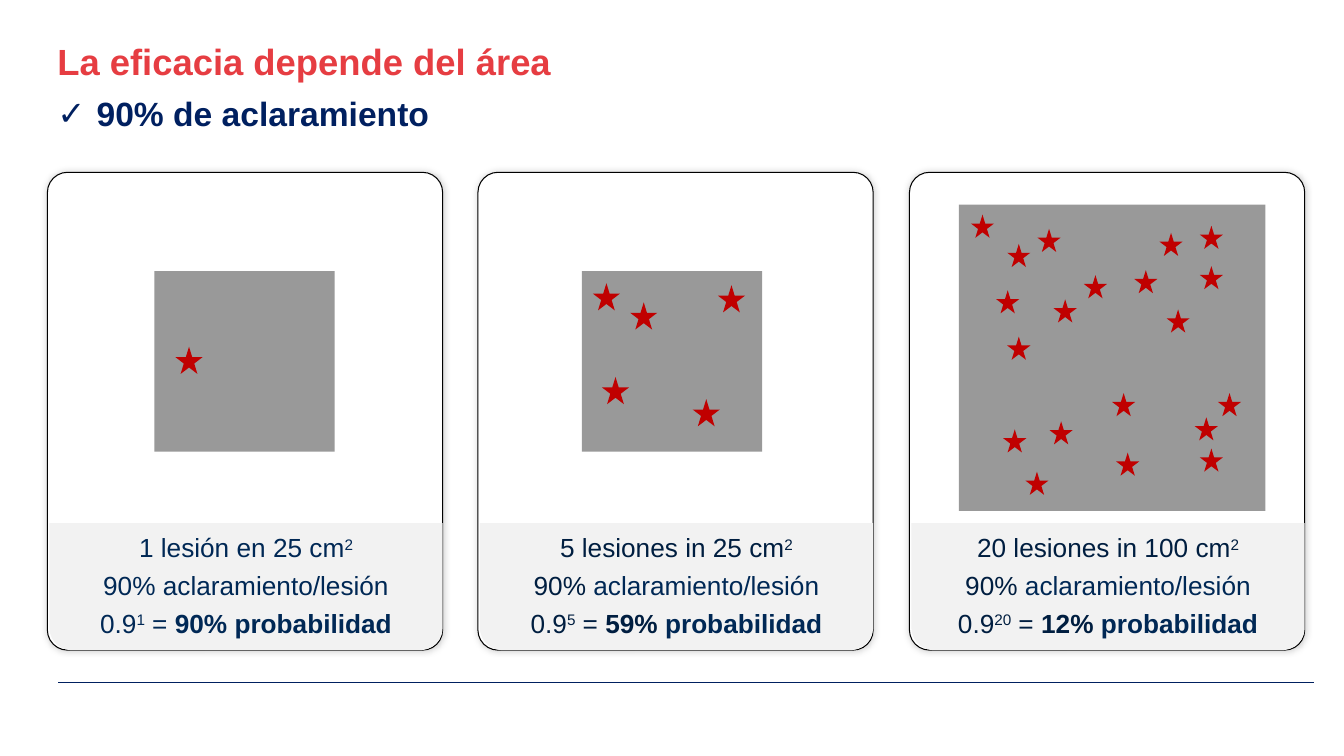
from dataclasses import dataclass

from lxml import etree
from pptx import Presentation
from pptx.dml.color import RGBColor
from pptx.enum.shapes import MSO_CONNECTOR, MSO_SHAPE as Preset
from pptx.enum.text import MSO_ANCHOR, PP_ALIGN
from pptx.oxml.ns import qn
from pptx.util import Emu, Pt

EMU_PER_PX = 9144  # 100 px to the inch


@dataclass(frozen=True)
class Theme:
    font: str = "Arial"
    white: str = "FFFFFF"
    outline: str = "000000"
    title: str = "E63D42"
    navy: str = "002060"
    label: str = "002855"
    figure: str = "001E40"
    caption: str = "F2F2F2"
    skin: str = "999999"
    lesion: str = "C00000"
    title_size: float = 26
    subtitle_size: float = 24
    caption_size: float = 18.7


THEME = Theme()


@dataclass(frozen=True)
class Patch:
    left: int
    top: int
    side: int
    star: int
    lesions: tuple[tuple[int, int], ...]


@dataclass(frozen=True)
class Case:
    sample: str
    exponent: str
    probability: str
    figure_color: str
    patch: Patch


@dataclass(frozen=True)
class Span:
    text: str
    color: str
    bold: bool = False
    raised: bool = False


CASES = (
    Case("1 lesión en 25 cm", "1", "90% ", THEME.label,
         Patch(153, 269, 179, 27, ((174, 344),))),
    Case("5 lesiones in 25 cm", "5", "59% ", THEME.figure,
         Patch(577, 269, 179, 27,
               ((588, 281), (625, 300), (597, 374), (712, 283), (687, 396)))),
    Case("20 lesiones in 100 cm", "20", "12% ", THEME.figure,
         Patch(951, 203, 304, 23,
               ((999, 242), (1190, 224), (1190, 445), (988, 288), (999, 334),
                (1029, 227), (1125, 268), (1208, 390), (963, 213), (1075, 273),
                (1185, 414), (1150, 231), (1190, 264), (1045, 297), (1041, 418),
                (1103, 390), (1157, 307), (1107, 449), (1017, 468), (995, 426)))),
)


def px(length: int) -> Emu:
    return Emu(length * EMU_PER_PX)


def rgb(color: str) -> RGBColor:
    return RGBColor.from_string(color)


def style(run, size: float, color: str, bold: bool) -> None:
    font = run.font
    font.name, font.size, font.bold = THEME.font, Pt(size), bold
    font.color.rgb = rgb(color)


def add_block(shapes, preset, left: int, top: int, width: int, height: int, color: str):
    """Add a flat preset shape without a line."""
    block = shapes.add_shape(preset, px(left), px(top), px(width), px(height))
    block.shadow.inherit = False
    block.fill.solid()
    block.fill.fore_color.rgb = rgb(color)
    block.line.fill.background()
    return block


def add_rule(shapes) -> None:
    rule = shapes.add_connector(MSO_CONNECTOR.STRAIGHT, px(58), px(677), px(1303), px(677))
    rule.line.color.rgb = rgb(THEME.navy)
    rule.line.width = Pt(1)
    etree.SubElement(rule._element.spPr, qn("a:effectLst"))


def add_heading(shapes) -> None:
    frame = shapes.add_textbox(px(47), px(39), px(640), px(94)).text_frame
    frame.word_wrap = True
    frame.text = "La eficacia depende del área\n90% de aclaramiento"
    title, subtitle = frame.paragraphs
    title.line_spacing = subtitle.line_spacing = 0.9
    subtitle.space_before = Pt(10)
    props = subtitle._p.get_or_add_pPr()
    props.set("marL", str(px(39)))
    props.set("indent", str(-px(39)))
    etree.SubElement(props, qn("a:buFont"), typeface=THEME.font)
    etree.SubElement(props, qn("a:buChar"), char="✓")
    style(title.runs[0], THEME.title_size, THEME.title, True)
    style(subtitle.runs[0], THEME.subtitle_size, THEME.navy, True)


def add_card(shapes, left: int) -> None:
    card = add_block(shapes, Preset.ROUNDED_RECTANGLE, left, 171, 392, 474, THEME.white)
    card.adjustments[0] = 0.051
    card.line.color.rgb = rgb(THEME.outline)
    card.line.width = Pt(0.75)
    effects = card._element.spPr.find(qn("a:effectLst"))
    shadow = etree.SubElement(effects, qn("a:outerShdw"), blurRad=str(Pt(5)), dist="0",
                              algn="ctr", rotWithShape="0")
    tint = etree.SubElement(shadow, qn("a:srgbClr"), val=THEME.outline)
    etree.SubElement(tint, qn("a:alpha"), val="20000")


def caption_lines(case: Case) -> tuple[tuple[Span, ...], ...]:
    ink = case.figure_color
    return (
        (Span(case.sample, ink), Span("2", ink, raised=True)),
        (Span("90% ", ink), Span("aclaramiento/lesión", THEME.label)),
        (Span("0.9", ink), Span(case.exponent, ink, raised=True), Span(" = ", ink),
         Span(case.probability, ink, bold=True),
         Span("probabilidad", THEME.label, bold=True)),
    )


def add_caption(shapes, left: int, case: Case) -> None:
    caption = add_block(shapes, Preset.ROUND_2_SAME_RECTANGLE, left, 519, 390, 126,
                        THEME.caption)
    caption.adjustments[0], caption.adjustments[1] = 0, 0.178
    frame = caption.text_frame
    frame.word_wrap = True
    frame.vertical_anchor = MSO_ANCHOR.BOTTOM
    frame.margin_left = frame.margin_right = px(7)
    frame.margin_top = frame.margin_bottom = px(5)
    for index, spans in enumerate(caption_lines(case)):
        paragraph = frame.add_paragraph() if index else frame.paragraphs[0]
        paragraph.alignment = PP_ALIGN.CENTER
        paragraph.line_spacing = 1.2
        for span in spans:
            run = paragraph.add_run()
            run.text = span.text
            style(run, THEME.caption_size, span.color, span.bold)
            if span.raised:
                run._r.get_or_add_rPr().set("baseline", "30000")


def add_patch(shapes, patch: Patch) -> None:
    """Group the skin square with its lesions."""
    members = shapes.add_group_shape().shapes
    add_block(members, Preset.RECTANGLE, patch.left, patch.top, patch.side, patch.side,
              THEME.skin)
    for left, top in patch.lesions:
        add_block(members, Preset.STAR_5_POINT, left, top, patch.star, patch.star,
                  THEME.lesion)


def main() -> None:
    deck = Presentation()
    deck.slide_width, deck.slide_height = px(1333), px(750)
    shapes = deck.slides.add_slide(deck.slide_layouts[6]).shapes
    add_rule(shapes)
    add_heading(shapes)
    for column, case in enumerate(CASES):
        left = 47 + column * 855 // 2
        add_card(shapes, left)
        add_caption(shapes, left + 2, case)
        add_patch(shapes, case.patch)
    deck.save("out.pptx")


if __name__ == "__main__":
    main()
